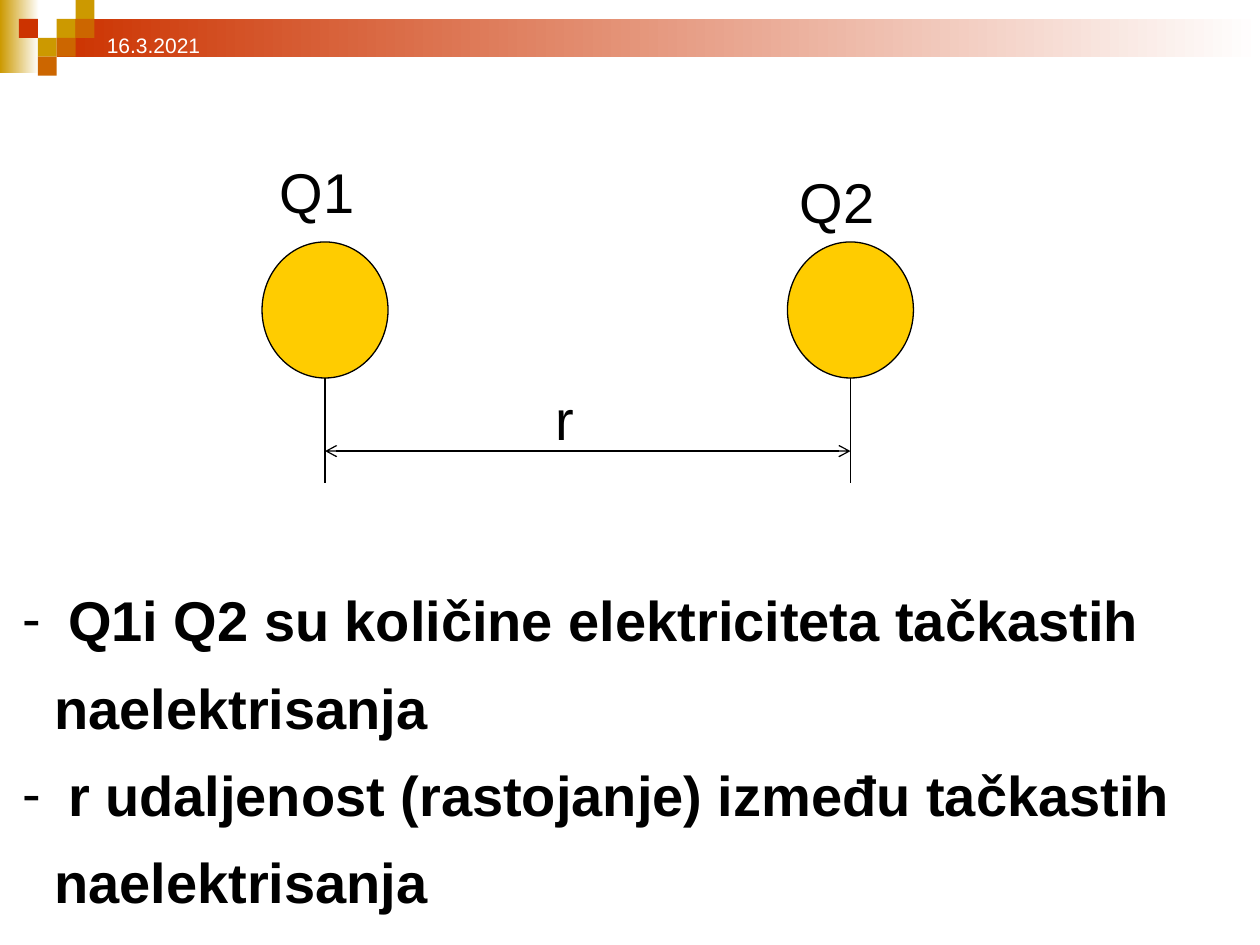
import pptx
import pptx.util
import pptx.dml.color
import pptx.enum.shapes
import pptx.enum.text
import pptx.oxml.ns
import lxml.etree

Inches = pptx.util.Inches
Pt = pptx.util.Pt
RGBColor = pptx.dml.color.RGBColor
Shape = pptx.enum.shapes.MSO_SHAPE
Anchor = pptx.enum.text.MSO_ANCHOR
qn = pptx.oxml.ns.qn

COLORS = {
    "gold": "CC9900",
    "orange": "CC6600",
    "red": "CC3300",
    "charge": "FFCC00",
    "black": "000000",
    "white": "FFFFFF",
}
colors = {name: RGBColor.from_string(value) for name, value in COLORS.items()}

deck = pptx.Presentation()
deck.slide_width = Inches(10)
deck.slide_height = Inches(7.5)
page = deck.slides.add_slide(deck.slide_layouts[1])
title = page.shapes.title
title.element.getparent().remove(title.element)


def add_label(text, left, top, width, height, size, color):
    box = page.shapes.add_textbox(Inches(left), Inches(top), Inches(width), Inches(height))
    box.text_frame.text = text
    span = box.text_frame.paragraphs[0].runs[0]
    span.font.name = "Arial"
    span.font.size = Pt(size)
    span.font.color.rgb = colors[color]
    return box


def add_line(start_x, start_y, end_x, end_y):
    line = page.shapes.add_connector(
        pptx.enum.shapes.MSO_CONNECTOR.STRAIGHT,
        Inches(start_x), Inches(start_y), Inches(end_x), Inches(end_y),
    )
    line.line.color.rgb = colors["black"]
    line.line.width = Pt(0.75)
    lxml.etree.SubElement(line.element.spPr, qn("a:effectLst"))
    return line


for color, left, top, width, height in [
    ("gold", 0, 0, 0.31, 0.58),
    ("red", 0.45, 0.15, 9.55, 0.3),
]:
    band = page.shapes.add_shape(
        Shape.RECTANGLE, Inches(left), Inches(top), Inches(width), Inches(height)
    )
    band.shadow.inherit = False
    band.line.fill.background()
    band.fill.gradient()
    band.fill.gradient_angle = 0
    for stop, name, position in zip(band.fill.gradient_stops, (color, "white"), (0, 1)):
        stop.color.rgb = colors[name]
        stop.position = position

TILE = 0.15
for color, column, row in [
    ("gold", 3, 1), ("gold", 4, 0), ("orange", 4, 1), ("gold", 2, 2),
    ("red", 1, 1), ("orange", 3, 2), ("orange", 2, 3),
]:
    tile = page.shapes.add_shape(
        Shape.RECTANGLE, Inches(column * TILE), Inches(row * TILE), Inches(TILE), Inches(TILE)
    )
    tile.shadow.inherit = False
    tile.fill.solid()
    tile.fill.fore_color.rgb = colors[color]
    tile.line.fill.background()

date = add_label("16.3.2021", 0.75, 0.17, 2.33, 0.34, 12, "white")
date.text_frame.word_wrap = True
date.text_frame.vertical_anchor = Anchor.BOTTOM

for name, center, label_left, label_top in [("Q1", 2.58, 2.12, 1.2), ("Q2", 6.75, 6.25, 1.28)]:
    charge = page.shapes.add_shape(
        Shape.OVAL, Inches(center - 0.5), Inches(1.92), Inches(1), Inches(1.08)
    )
    charge.shadow.inherit = False
    charge.fill.solid()
    charge.fill.fore_color.rgb = colors["charge"]
    charge.line.color.rgb = colors["black"]
    charge.line.width = Pt(0.75)
    add_label(name, label_left, label_top, 0.8, 0.64, 32, "black")
    add_line(center, 3, center, 3.83)

distance = add_line(6.75, 3.58, 2.58, 3.58)
for end in ("a:headEnd", "a:tailEnd"):
    lxml.etree.SubElement(distance.line._get_or_add_ln(), qn(end), type="arrow")
add_label("r", 4.31, 3, 0.35, 0.64, 32, "black")

body = page.placeholders[1]
body.left, body.top = Inches(0.08), Inches(4.44)
body.width, body.height = Inches(9.75), Inches(2.77)
frame = body.text_frame
frame.word_wrap = True
frame.auto_size = pptx.enum.text.MSO_AUTO_SIZE.NONE
frame.vertical_anchor = Anchor.TOP
frame.text = "\n".join([
    "Q1i Q2 su količine elektriciteta tačkastih",
    "naelektrisanja",
    "r udaljenost (rastojanje) između tačkastih",
    "naelektrisanja",
])
for index, para in enumerate(frame.paragraphs):
    para.line_spacing = 1.3
    para.space_before = Pt(0)
    span = para.runs[0]
    span.font.name = "Arial"
    span.font.size = Pt(32)
    span.font.bold = True
    span.font.color.rgb = colors["black"]
    properties = para._p.get_or_add_pPr()
    if index % 2 == 0:
        properties.set("marL", str(Inches(0.36)))
        properties.set("indent", str(-Inches(0.36)))
        lxml.etree.SubElement(properties, qn("a:buFont"), typeface="Arial")
        lxml.etree.SubElement(properties, qn("a:buChar"), char="-")
    else:
        properties.set("marL", str(Inches(0.25)))
        properties.set("indent", "0")
        lxml.etree.SubElement(properties, qn("a:buNone"))

deck.save("out.pptx")
